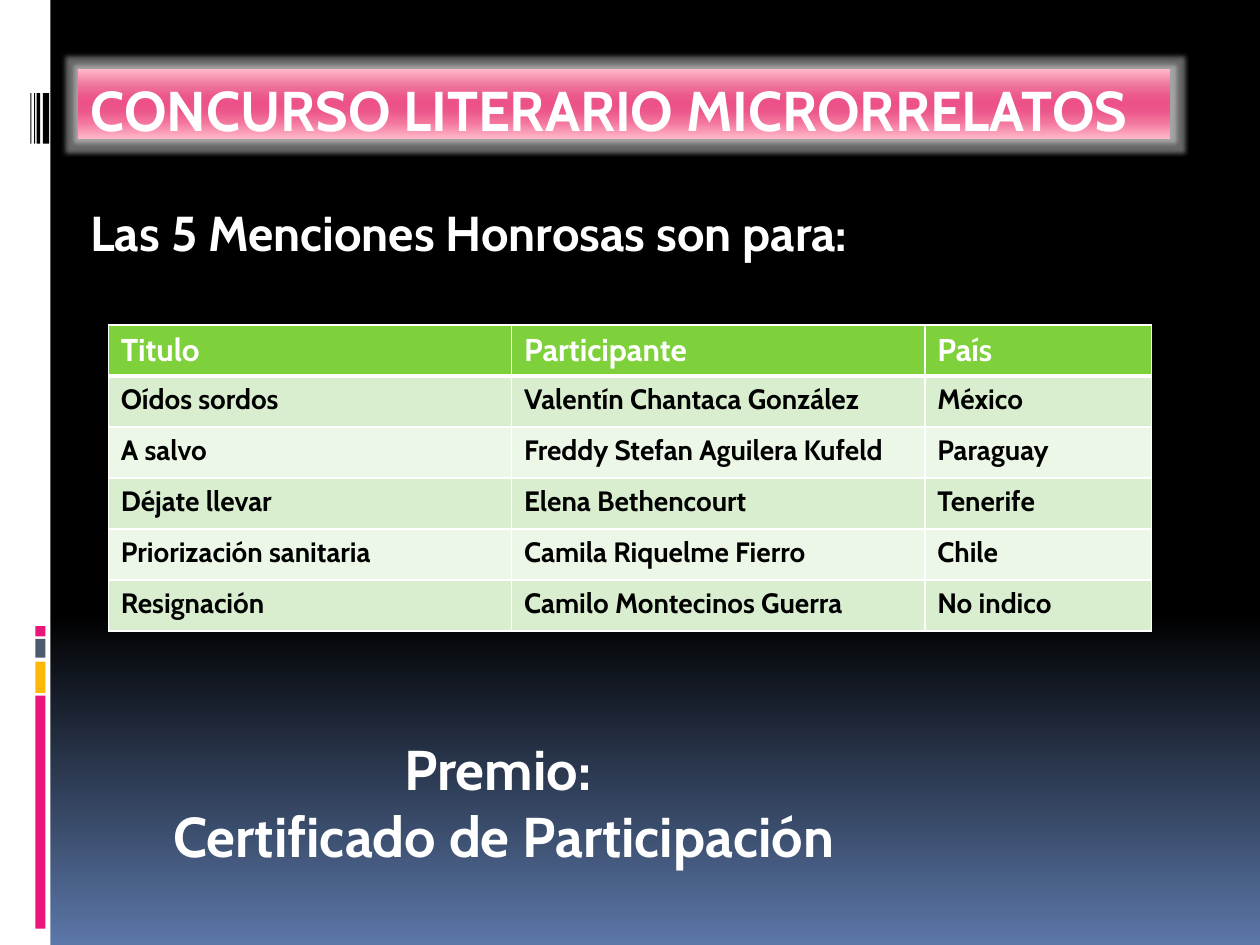
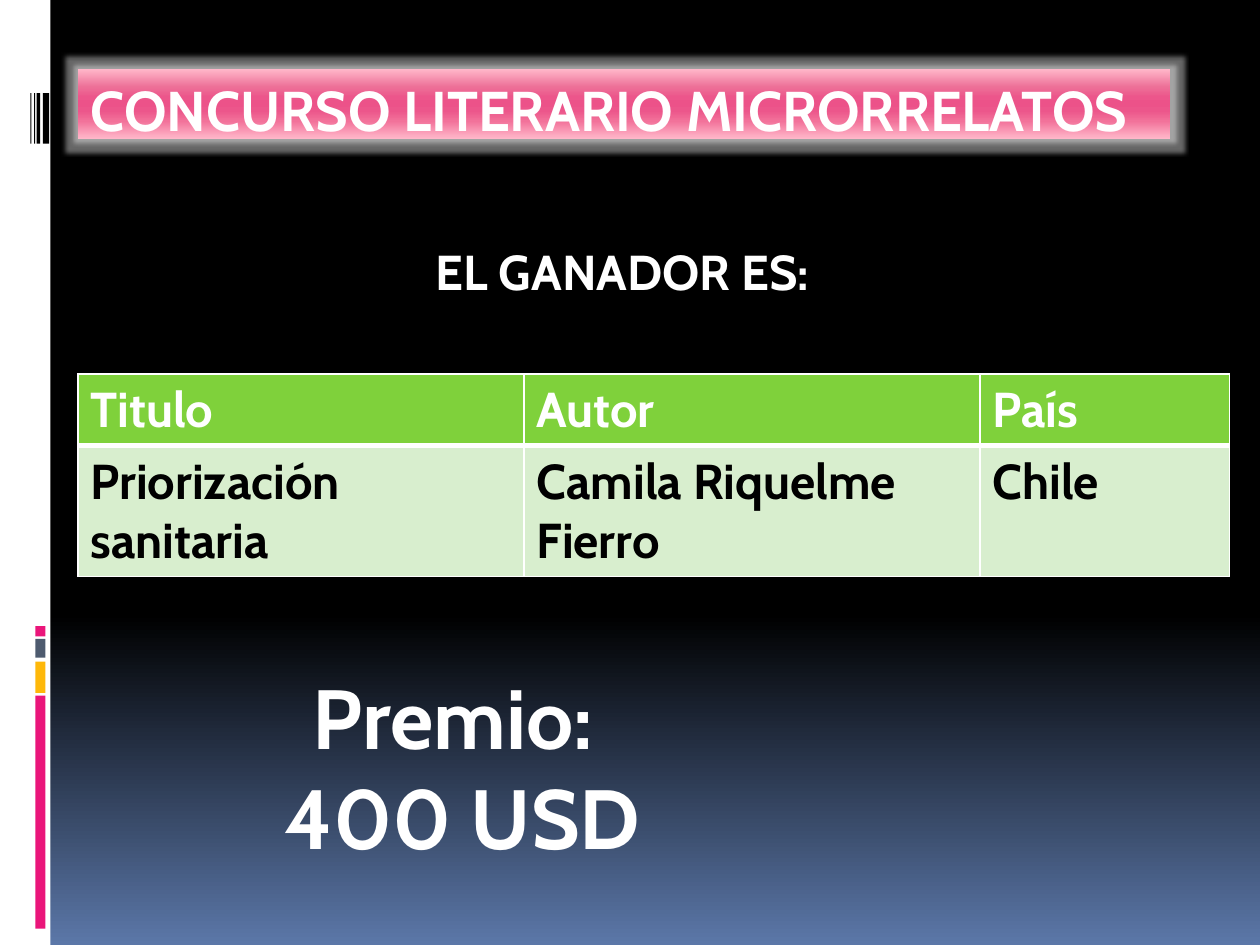
"""Build the two award slides of a short-story contest."""
import dataclasses

import lxml.etree
import pptx
import pptx.dml.color
import pptx.enum.shapes
import pptx.enum.text
import pptx.oxml.ns
import pptx.util

Inches = pptx.util.Inches
Pt = pptx.util.Pt
qn = pptx.oxml.ns.qn
ALIGN = pptx.enum.text.PP_ALIGN


@dataclasses.dataclass(frozen=True)
class Theme:
    """Colours, font and type sizes shared by the slides."""
    font: str = "Cabin"
    white: str = "FFFFFF"
    black: str = "000000"
    pink: str = "EA157A"
    amber: str = "FEB80A"
    slate: str = "4E5B6F"
    header_green: str = "7FD13B"
    row_greens: tuple = ("D8EECE", "ECF7E8")
    backdrop: tuple = ((0, "000000"), (65, "000000"), (100, "5B77A8"))
    title_band: tuple = ((0, "FFB6C9"), (25, "ED7198"), (40, "EC568B"), (50, "EC5289"),
                         (60, "EC568B"), (75, "F2729A"), (100, "FFB6C9"))
    title_size: int = 32
    heading_size: int = 28
    prize_size: int = 32
    big_prize_size: int = 48
    header_size: int = 18
    body_size: int = 16
    rule: int = 1
    header_rule: int = 3


THEME = Theme()


def rgb(color):
    """Turn a hex string into a colour."""
    return pptx.dml.color.RGBColor.from_string(color)


def add_color(parent, color):
    """Append a hex colour element to an XML parent."""
    return lxml.etree.SubElement(parent, qn("a:srgbClr"), val=color)


def fill_gradient(fill, element, stops):
    """Give a fill a vertical gradient with the listed stops."""
    fill.gradient()
    fill.gradient_angle = 270
    stop_list = element.find(".//" + qn("a:gsLst"))
    for stop in list(stop_list):
        stop_list.remove(stop)
    for percent, color in stops:
        stop = lxml.etree.SubElement(stop_list, qn("a:gs"), pos=str(percent * 1000))
        add_color(stop, color)


def add_rectangle(slide, left, top, width, height, color=None):
    """Add a rectangle without outline, filled if a colour is given."""
    shape = slide.shapes.add_shape(pptx.enum.shapes.MSO_SHAPE.RECTANGLE, Inches(left),
                                   Inches(top), Inches(width), Inches(height))
    shape.shadow.inherit = False
    shape.line.fill.background()
    if color:
        shape.fill.solid()
        shape.fill.fore_color.rgb = rgb(color)
    return shape


def write_lines(text_frame, lines, size, color=THEME.white, align=ALIGN.LEFT):
    """Write each line as a bold paragraph."""
    text_frame.word_wrap = True
    for index, line in enumerate(lines):
        paragraph = text_frame.paragraphs[0] if index == 0 else text_frame.add_paragraph()
        paragraph.alignment = align
        run = paragraph.add_run()
        run.text = line
        run.font.name = THEME.font
        run.font.size = Pt(size)
        run.font.bold = True
        run.font.color.rgb = rgb(color)


def add_text(slide, left, top, width, height, lines, size, align=ALIGN.LEFT):
    """Add a text box with white bold lines."""
    box = slide.shapes.add_textbox(Inches(left), Inches(top), Inches(width), Inches(height))
    write_lines(box.text_frame, lines, size, align=align)


def add_side_band(slide):
    """Add the white side band with its barcode and coloured blocks."""
    add_rectangle(slide, 0, 0, 0.4, 7.5, THEME.white)
    for left, width in ((0.34, 0.05), (0.29, 0.03), (0.27, 0.01), (0.24, 0.01)):
        add_rectangle(slide, left, 0.74, width, 0.4, THEME.black)
    for top, height, color in ((5.52, 1.85, THEME.pink), (5.25, 0.25, THEME.amber),
                               (5.07, 0.15, THEME.slate), (4.97, 0.08, THEME.pink)):
        add_rectangle(slide, 0.28, top, 0.08, height, color)


def add_title(slide, text):
    """Add the glowing pink title band."""
    band = add_rectangle(slide, 0.62, 0.55, 8.67, 0.55)
    fill_gradient(band.fill, band._element, THEME.title_band)
    effects = band._element.spPr.find(qn("a:effectLst"))
    glow = lxml.etree.SubElement(effects, qn("a:glow"), rad=str(Inches(0.07)))
    lxml.etree.SubElement(add_color(glow, THEME.white), qn("a:alpha"), val="40000")
    band.text_frame.vertical_anchor = pptx.enum.text.MSO_ANCHOR.TOP
    write_lines(band.text_frame, [text], THEME.title_size)


def add_contest_slide(presentation):
    """Add a slide with the shared background, side band and title."""
    slide = presentation.slides.add_slide(presentation.slide_layouts[6])
    fill_gradient(slide.background.fill, slide._element, THEME.backdrop)
    add_side_band(slide)
    add_title(slide, "CONCURSO LITERARIO MICRORRELATOS")
    return slide


def set_borders(cell, top, bottom):
    """Draw white borders around a cell, with given top and bottom widths."""
    properties = cell._tc.get_or_add_tcPr()
    widths = {"lnL": THEME.rule, "lnR": THEME.rule, "lnT": top, "lnB": bottom}
    for side, width in widths.items():
        line = lxml.etree.SubElement(properties, qn("a:" + side), w=str(Pt(width)))
        add_color(lxml.etree.SubElement(line, qn("a:solidFill")), THEME.white)


def add_award_table(slide, left, top, widths, heights, rows, header_size, body_size):
    """Add a table with a green header and alternating pale green rows."""
    frame = slide.shapes.add_table(len(rows), len(widths), Inches(left), Inches(top),
                                   Inches(sum(widths)), Inches(sum(heights)))
    table = frame.table
    for column, width in zip(table.columns, widths):
        column.width = Inches(width)
    for row_index, (values, height) in enumerate(zip(rows, heights)):
        table.rows[row_index].height = Inches(height)
        is_header = row_index == 0
        color = THEME.header_green if is_header else THEME.row_greens[(row_index - 1) % 2]
        for column_index, value in enumerate(values):
            cell = table.cell(row_index, column_index)
            set_borders(cell, THEME.header_rule if row_index == 1 else THEME.rule,
                        THEME.header_rule if is_header else THEME.rule)
            cell.fill.solid()
            cell.fill.fore_color.rgb = rgb(color)
            write_lines(cell.text_frame, [value], header_size if is_header else body_size,
                        THEME.white if is_header else THEME.black)


def build_mentions_slide(presentation):
    """Build the slide with the five honourable mentions."""
    slide = add_contest_slide(presentation)
    add_text(slide, 0.62, 1.56, 6.8, 0.57, ["Las 5 Menciones Honrosas son para:"],
             THEME.heading_size)
    mentions = [
        ("Titulo", "Participante", "País"),
        ("Oídos sordos", "Valentín Chantaca González", "México"),
        ("A salvo", "Freddy Stefan Aguilera Kufeld", "Paraguay"),
        ("Déjate llevar", "Elena Bethencourt", "Tenerife"),
        ("Priorización sanitaria", "Camila Riquelme Fierro", "Chile"),
        ("Resignación", "Camilo Montecinos Guerra", "No indico"),
    ]
    add_award_table(slide, 0.86, 2.58, (3.2, 3.28, 1.8), [2.43 / len(mentions)] * len(mentions),
                    mentions, THEME.header_size, THEME.body_size)
    add_text(slide, 0.94, 5.78, 6.02, 1.18, ["Premio:", " Certificado de Participación"],
             THEME.prize_size, ALIGN.CENTER)


def build_winner_slide(presentation):
    """Build the slide with the winner."""
    slide = add_contest_slide(presentation)
    add_text(slide, 3.36, 1.87, 3.2, 0.57, ["EL GANADOR ES:"], THEME.heading_size)
    winner = [("Titulo", "Autor", "País"),
              ("Priorización sanitaria", "Camila Riquelme Fierro", "Chile")]
    add_award_table(slide, 0.62, 2.97, (3.54, 3.62, 1.98), (0.56, 1.04), winner,
                    THEME.heading_size, THEME.heading_size)
    add_text(slide, 1.48, 5.23, 4.38, 1.72, ["Premio: ", "400 USD"],
             THEME.big_prize_size, ALIGN.CENTER)


def main():
    """Build and save the presentation."""
    presentation = pptx.Presentation()
    presentation.slide_width = Inches(10)
    presentation.slide_height = Inches(7.5)
    build_mentions_slide(presentation)
    build_winner_slide(presentation)
    presentation.save("out.pptx")


if __name__ == "__main__":
    main()
